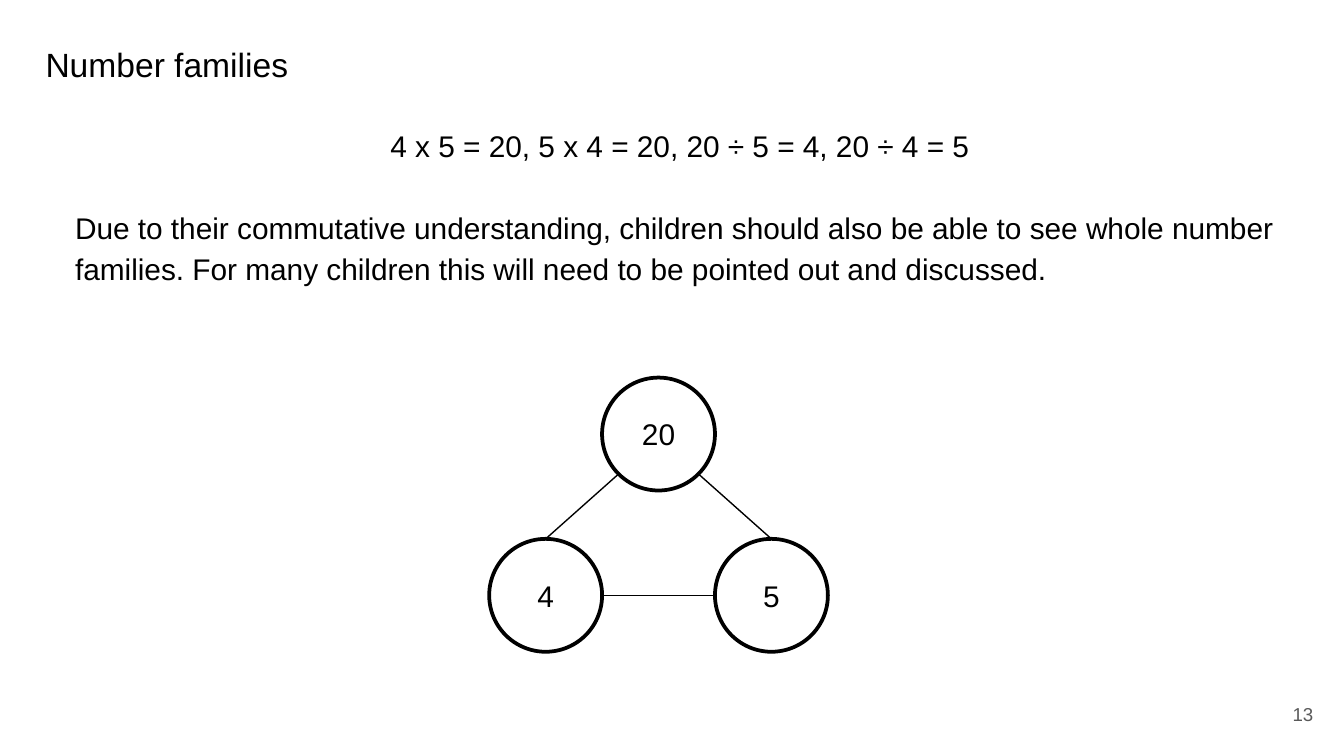
from dataclasses import dataclass
from math import sqrt

from lxml.etree import SubElement
from pptx import Presentation
from pptx.dml.color import RGBColor
from pptx.enum.shapes import MSO_CONNECTOR as Connector, MSO_SHAPE as Shape
from pptx.enum.text import MSO_ANCHOR as Anchor, PP_ALIGN as Align
from pptx.oxml.ns import qn
from pptx.util import Inches, Pt


@dataclass(frozen=True)
class Theme:
    font: str = "Arial"
    ink: RGBColor = RGBColor(0, 0, 0)
    muted: RGBColor = RGBColor(0x59, 0x59, 0x59)
    paper: RGBColor = RGBColor(255, 255, 255)
    title: int = 18
    body: int = 16
    number: int = 10
    ring: float = 2
    link: float = 0.75


THEME = Theme()
DIAMETER = 0.84
RADIUS = DIAMETER / 2


def write(para, text, size=THEME.body, color=THEME.ink, align=Align.LEFT,
          spacing=None, before=0, indent=0):
    """Put one formatted span of text into a paragraph."""
    para.alignment = align
    para.space_before = Pt(before)
    if spacing:
        para.line_spacing = spacing
    if indent:
        para._p.get_or_add_pPr().set("marL", str(Inches(indent)))
    span = para.add_run()
    span.text = text
    span.font.name = THEME.font
    span.font.size = Pt(size)
    span.font.color.rgb = color


def add_box(page, left, top, width, height, anchor=Anchor.TOP):
    """Add an empty wrapping text box and return its text frame."""
    box = page.shapes.add_textbox(
        Inches(left), Inches(top), Inches(width), Inches(height))
    frame = box.text_frame
    frame.word_wrap = True
    frame.vertical_anchor = anchor
    frame.margin_left = frame.margin_right = Inches(0.1)
    frame.margin_top = frame.margin_bottom = Inches(0.1)
    return frame


def add_circle(shapes, center_x, center_y, text):
    circle = shapes.add_shape(
        Shape.OVAL, Inches(center_x - RADIUS), Inches(center_y - RADIUS),
        Inches(DIAMETER), Inches(DIAMETER))
    circle.shadow.inherit = False
    circle.fill.background()
    circle.line.color.rgb = THEME.ink
    circle.line.width = Pt(THEME.ring)
    circle.text_frame.vertical_anchor = Anchor.MIDDLE
    write(circle.text_frame.paragraphs[0], text, align=Align.CENTER)
    return circle


def add_link(shapes, start, end):
    link = shapes.add_connector(
        Connector.STRAIGHT, *(Inches(value) for value in (*start, *end)))
    link.line.color.rgb = THEME.ink
    link.line.width = Pt(THEME.link)
    SubElement(link._element.spPr, qn("a:effectLst"))
    return link


def add_number_triangle(page, center_x, top_y, base_y, product, factors):
    """Draw the product above its two factors, all three linked."""
    shapes = page.shapes.add_group_shape().shapes
    add_circle(shapes, center_x, top_y, product)
    diagonal = RADIUS / sqrt(2)
    for side, factor in zip((-1, 1), factors):
        factor_x = center_x + side * DIAMETER
        circle = add_circle(shapes, factor_x, base_y, factor)
        link = add_link(
            shapes, (center_x + side * diagonal, top_y + diagonal),
            (factor_x, base_y - RADIUS))
        link.end_connect(circle, 0)
    add_link(shapes, (center_x - RADIUS, base_y), (center_x + RADIUS, base_y))


def main():
    deck = Presentation()
    deck.slide_width = Inches(10)
    deck.slide_height = Inches(10 * 9 / 16)
    page = deck.slides.add_slide(deck.slide_layouts[6])
    page.background.fill.solid()
    page.background.fill.fore_color.rgb = THEME.paper

    # Title
    title = add_box(page, 0.24, 0.23, 9.32, 0.48)
    write(title.paragraphs[0], "Number families", size=THEME.title)

    # Equations and explanation
    body = add_box(page, 0.34, 0.81, 9.32, 1.4)
    write(body.paragraphs[0], "4 x 5 = 20, 5 x 4 = 20, 20 ÷ 5 = 4, 20 ÷ 4 = 5",
          align=Align.CENTER, spacing=1.15, indent=0.12)
    write(body.add_paragraph(),
          "Due to their commutative understanding, children should also be "
          "able to see whole number families. For many children this will "
          "need to be pointed out and discussed.",
          spacing=1.15, before=22, indent=0.12)

    # Number family
    add_number_triangle(page, 4.9, 3.23, 4.43, "20", ("4", "5"))

    # Page number
    number = add_box(page, 9.27, 5.1, 0.6, 0.43, anchor=Anchor.MIDDLE)
    write(number.paragraphs[0], "13", size=THEME.number, color=THEME.muted,
          align=Align.RIGHT)

    deck.save("out.pptx")


if __name__ == "__main__":
    main()
